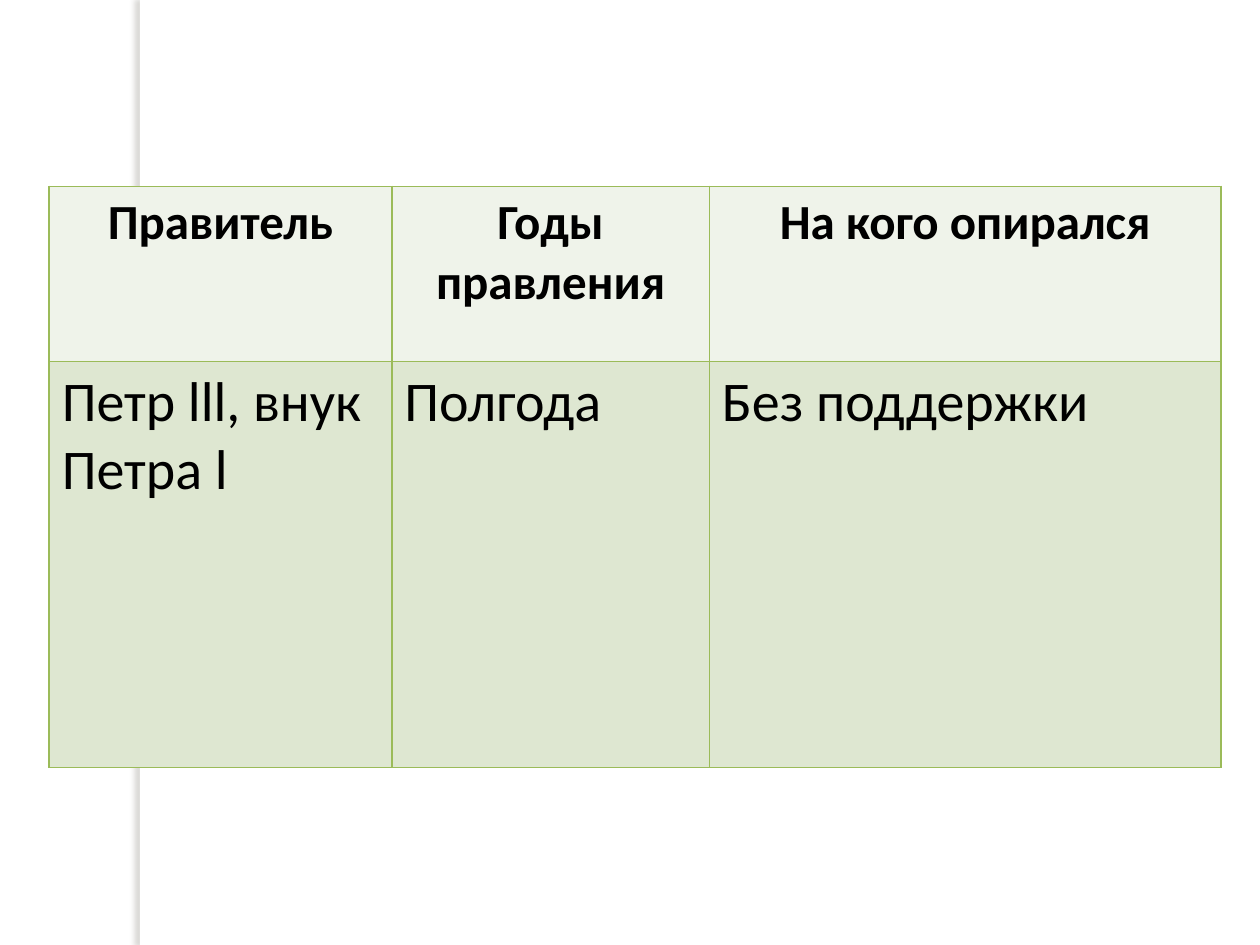
from lxml import etree
from pptx import Presentation
from pptx.dml.color import RGBColor
from pptx.enum.shapes import MSO_SHAPE
from pptx.enum.text import PP_ALIGN
from pptx.oxml import parse_xml
from pptx.oxml.ns import qn
from pptx.util import Inches, Pt

RECTANGLE = MSO_SHAPE.RECTANGLE
CENTER, LEFT = PP_ALIGN.CENTER, PP_ALIGN.LEFT
BORDER = "9BBB59"
DRAWING_NS = "http://schemas.openxmlformats.org/drawingml/2006/main"


def color(value):
    return RGBColor.from_string(value)


def add_border(cell, side):
    line = etree.SubElement(cell._tc.get_or_add_tcPr(), qn(f"a:{side}"), w=str(Pt(1)))
    fill = etree.SubElement(line, qn("a:solidFill"))
    etree.SubElement(fill, qn("a:srgbClr"), val=BORDER)


deck = Presentation()
deck.slide_width, deck.slide_height = Inches(10), Inches(7.5)
page = deck.slides.add_slide(deck.slide_layouts[6])

strip = page.shapes.add_shape(RECTANGLE, Inches(1.11), 0, Inches(0.08), Inches(7.5))
strip.fill.solid()
strip.fill.fore_color.rgb = color("FFFFFF")
strip.line.fill.background()
strip.shadow.inherit = False
strip._element.spPr.find(qn("a:effectLst")).append(parse_xml(
    f'<a:outerShdw xmlns:a="{DRAWING_NS}" blurRad="{Pt(3)}" dist="{Pt(3)}" dir="10800000"'
    ' algn="tl" rotWithShape="0"><a:srgbClr val="736F63"><a:alpha val="25000"/>'
    '</a:srgbClr></a:outerShdw>'))

rows = [
    (1.39, "EFF3EA", CENTER, {"size": Pt(28), "bold": True},
     ["Правитель", "Годы\nправления", "На кого опирался"]),
    (3.22, "DEE7D1", LEFT, {"size": Pt(32), "bold": False},
     ["Петр lll, внук Петра l", "Полгода", "Без поддержки"]),
]
widths = [2.72, 2.52, 4.06]
table = page.shapes.add_table(len(rows), len(widths), Inches(0.39), Inches(1.48),
                              Inches(sum(widths)), Inches(4.61)).table
for column, width in zip(table.columns, widths):
    column.width = Inches(width)

for row, (height, background, alignment, style, texts) in zip(table.rows, rows):
    row.height = Inches(height)
    for cell, text in zip(row.cells, texts):
        for side in ("lnL", "lnR", "lnT", "lnB"):
            add_border(cell, side)
        cell.fill.solid()
        cell.fill.fore_color.rgb = color(background)
        cell.text_frame.text = text
        for para in cell.text_frame.paragraphs:
            para.alignment = alignment
            for span in para.runs:
                span.font.color.rgb = color("000000")
                for name, value in {"name": "Calibri", **style}.items():
                    setattr(span.font, name, value)

deck.save("out.pptx")
